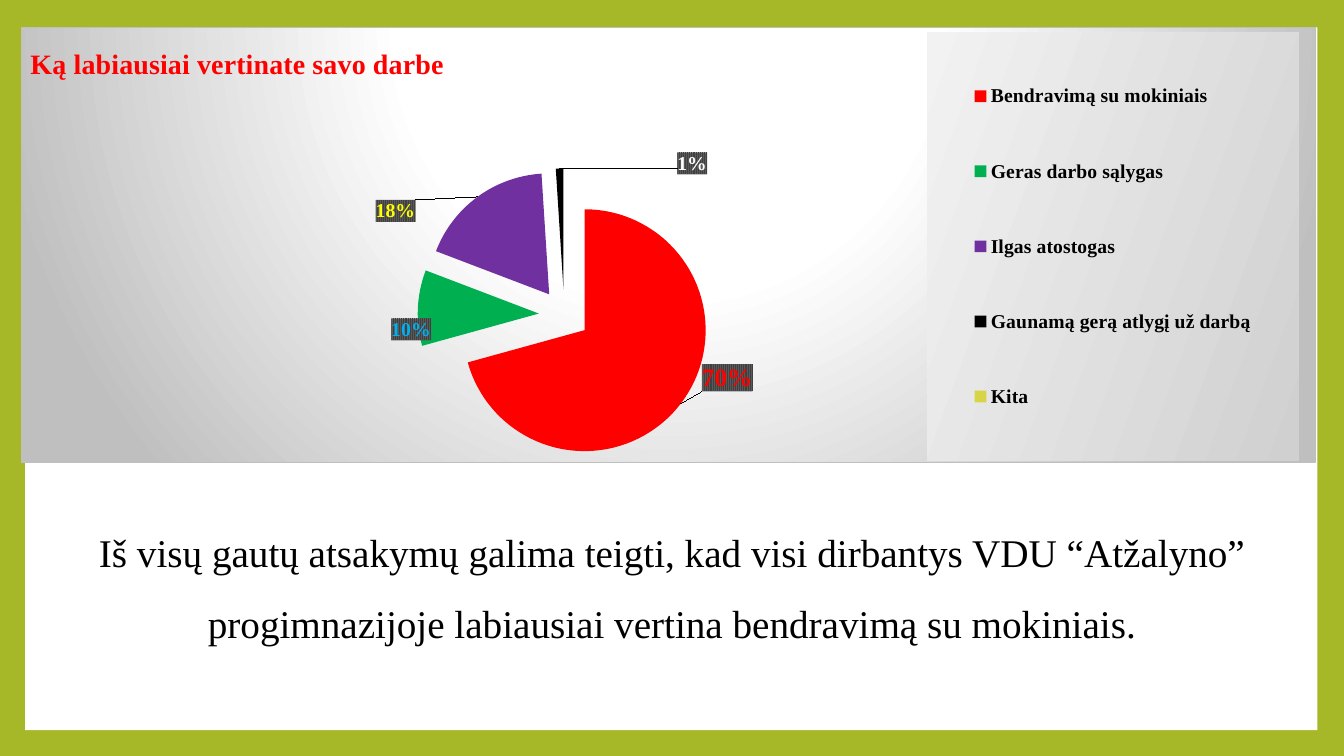
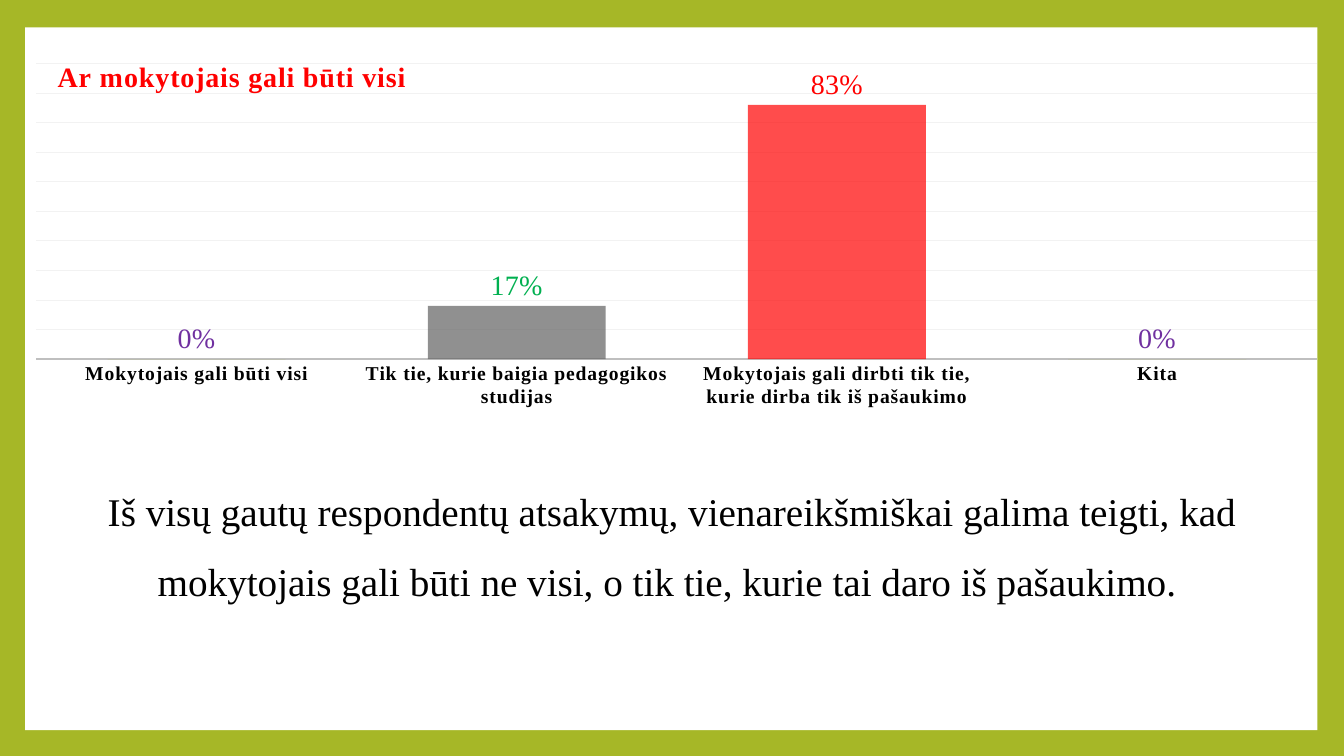
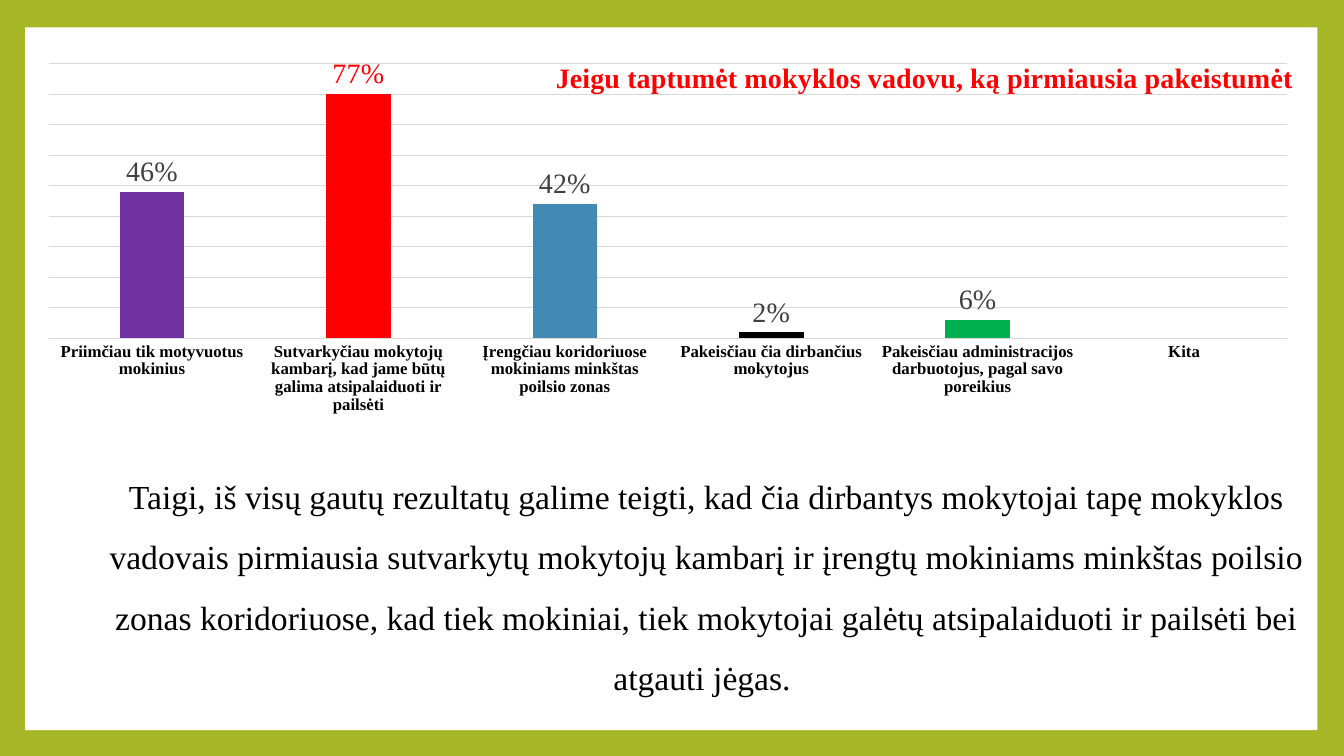
from pptx import Presentation
from pptx.chart.data import CategoryChartData
from pptx.dml.color import RGBColor
from pptx.enum.chart import XL_CHART_TYPE, XL_LABEL_POSITION, XL_LEGEND_POSITION, XL_TICK_MARK
from pptx.enum.shapes import MSO_SHAPE
from pptx.enum.text import MSO_AUTO_SIZE, PP_ALIGN
from pptx.oxml import parse_xml
from pptx.oxml.ns import nsdecls, qn
from pptx.util import Pt

PIE, COLUMN = XL_CHART_TYPE.PIE, XL_CHART_TYPE.COLUMN_CLUSTERED
LABEL_CENTER, LABEL_OUTSIDE = XL_LABEL_POSITION.CENTER, XL_LABEL_POSITION.OUTSIDE_END
LEGEND_RIGHT = XL_LEGEND_POSITION.RIGHT
NO_TICK = XL_TICK_MARK.NONE
RECTANGLE = MSO_SHAPE.RECTANGLE
GROW = MSO_AUTO_SIZE.SHAPE_TO_FIT_TEXT
CENTERED = PP_ALIGN.CENTER

SERIF, SANS = "Times New Roman", "Calibri"
OLIVE = RGBColor(0xA6, 0xB7, 0x27)
WHITE = RGBColor(0xFF, 0xFF, 0xFF)
BLACK = RGBColor(0x00, 0x00, 0x00)
RED = RGBColor(0xFF, 0x00, 0x00)
GREEN = RGBColor(0x00, 0xB0, 0x50)
PURPLE = RGBColor(0x70, 0x30, 0xA0)
BLUE = RGBColor(0x41, 0x8A, 0xB3)
SKY = RGBColor(0x00, 0xB0, 0xF0)
YELLOW = RGBColor(0xFF, 0xFF, 0x00)
MUSTARD = RGBColor(0xD7, 0xD4, 0x47)
DARK = RGBColor(0x40, 0x40, 0x40)
STONE = RGBColor(0x61, 0x61, 0x62)
SILVER = RGBColor(0xBF, 0xBF, 0xBF)
LIGHT = RGBColor(0xD9, 0xD9, 0xD9)
PALE = RGBColor(0xF2, 0xF2, 0xF2)

CHART_GRADIENT = (
    '<a:gradFill><a:gsLst><a:gs pos="0"><a:srgbClr val="FFFFFF"/></a:gs>'
    '<a:gs pos="39000"><a:srgbClr val="FFFFFF"/></a:gs>'
    '<a:gs pos="100000"><a:srgbClr val="BFBFBF"/></a:gs></a:gsLst>'
    '<a:path path="circle"><a:fillToRect l="50000" t="-80000" r="50000" b="180000"/></a:path>'
    '</a:gradFill><a:ln w="9525"><a:solidFill><a:srgbClr val="BFBFBF"/></a:solidFill></a:ln>'
)
LEGEND_GRADIENT = (
    '<a:gradFill><a:gsLst><a:gs pos="0"><a:srgbClr val="F2F2F2"/></a:gs>'
    '<a:gs pos="100000"><a:srgbClr val="D0D0D0"/></a:gs></a:gsLst>'
    '<a:lin ang="1200000" scaled="0"/></a:gradFill>'
)
LABEL_PATTERN = (
    '<a:pattFill prst="narVert"><a:fgClr><a:srgbClr val="404040"/></a:fgClr>'
    '<a:bgClr><a:srgbClr val="595959"/></a:bgClr></a:pattFill>'
)
CLEAR = '<a:noFill/><a:ln><a:noFill/></a:ln>'


def style_font(font, size, color, bold=False, name=SERIF):
    """Set size, colour, weight and typeface of a font."""
    font.size, font.bold, font.name = Pt(size), bold, name
    font.color.rgb = color


def chart_xml(tag, inner="", attributes=""):
    """Build one chart element from its inner XML."""
    return parse_xml(f'<c:{tag} {nsdecls("c", "a")} {attributes}>{inner}</c:{tag}>')


def set_layout(owner, index, x, y, size=None, offset=False, inner_plot=False):
    """Give a chart part a manual position as fractions of the chart."""
    for old in owner.findall(qn("c:layout")):
        owner.remove(old)
    parts = ['<c:layoutTarget val="inner"/>'] if inner_plot else []
    if not offset:
        parts.append('<c:xMode val="edge"/><c:yMode val="edge"/>')
    parts.append(f'<c:x val="{x}"/><c:y val="{y}"/>')
    if size:
        parts.append(f'<c:w val="{size[0]}"/><c:h val="{size[1]}"/>')
    manual = "".join(parts)
    owner.insert(index, chart_xml("layout", f"<c:manualLayout>{manual}</c:manualLayout>"))


def new_page(deck):
    """Add a page with the white panel inside the olive frame."""
    page = deck.slides.add_slide(deck.slide_layouts[6])
    panel = page.shapes.add_shape(RECTANGLE, Pt(18), Pt(19.5), Pt(923), Pt(502))
    panel.shadow.inherit = False
    panel.fill.solid()
    panel.fill.fore_color.rgb = WHITE
    panel.line.fill.background()
    return page


def add_conclusion(page, box, text, size=28, indent=0):
    """Write the centred conclusion under the chart."""
    shape = page.shapes.add_textbox(*map(Pt, box))
    frame = shape.text_frame
    frame.word_wrap, frame.auto_size = True, GROW
    para = frame.paragraphs[0]
    para.text = text
    para.alignment, para.line_spacing, para.space_after = CENTERED, 1.5, Pt(8)
    para._p.get_or_add_pPr().set("marL", str(Pt(indent)))
    style_font(para.font, size, BLACK)


def add_survey_chart(page, box, kind, title, title_at, plot, answers, background):
    """Add a one-series chart with title, plot area, background and point colours."""
    data = CategoryChartData()
    data.categories = [answer[0] for answer in answers]
    data.add_series("Series 1", [answer[1] for answer in answers])
    chart = page.shapes.add_chart(kind, *map(Pt, box), data).chart
    style_font(chart.font, 10, BLACK, name=SANS)
    chart.has_legend = False
    frame = chart.chart_title.text_frame
    frame.text = title
    style_font(frame.paragraphs[0].runs[0].font, 20, RED, True)
    root = chart.element
    set_layout(root.xpath("c:chart/c:title")[0], 1, *title_at)
    set_layout(root.xpath("c:chart/c:plotArea")[0], 0, *plot[:2], plot[2:], inner_plot=True)
    root.xpath("c:chart")[0].addnext(chart_xml("spPr", background))
    chart.plots[0].vary_by_categories = False
    series = chart.plots[0].series[0]
    series.format.fill.solid()
    series.format.fill.fore_color.rgb = OLIVE
    for index, answer in enumerate(answers):
        if answer[2] is not None:
            fill = series.points[index].format.fill
            fill.solid()
            fill.fore_color.rgb = answer[2]
    return chart


def add_pie(page, box, title, answers, labels):
    """Add an exploded pie with moved labels and a shaded legend."""
    chart = add_survey_chart(page, box, PIE, title, (0.003, 0.03),
                             (0, 0.324, 0.839, 0.674), answers, CHART_GRADIENT)
    series = chart.plots[0].series[0]
    root = chart.element
    root.xpath(".//c:dPt")[0].addprevious(chart_xml("explosion", attributes='val="21"'))
    series.data_labels.show_value = False
    for index, (size, color, _, _) in enumerate(labels):
        label = series.points[index].data_label
        style_font(label.font, size, color, True)
        label.position = LABEL_CENTER
    for label, (_, _, x, y) in zip(root.xpath(".//c:dLbl"), labels):
        for old in label.findall(qn("c:spPr")):
            label.remove(old)
        set_layout(label, 1, x, y, offset=True)
        label.insert(2, chart_xml("numFmt", attributes='formatCode="0&quot;%&quot;" sourceLinked="0"'))
        label.insert(3, chart_xml("spPr", LABEL_PATTERN))
    chart.has_legend = True
    chart.legend.position = LEGEND_RIGHT
    chart.legend.include_in_layout = False
    style_font(chart.legend.font, 14, BLACK, True)
    legend = root.xpath("c:chart/c:legend")[0]
    set_layout(legend, 1, 0.7, 0.01, (0.287, 0.987))
    legend.find(qn("c:overlay")).addnext(chart_xml("spPr", LEGEND_GRADIENT))


def add_columns(page, box, title, title_x, plot, answers, top, gap, overlap,
                category_size, axis_line, grid_color):
    """Add a column chart with written labels and a hidden value axis."""
    chart = add_survey_chart(page, box, COLUMN, title, (title_x, 0.13), plot, answers, CLEAR)
    columns = chart.plots[0]
    columns.gap_width, columns.overlap = gap, overlap
    series = columns.series[0]
    series.invert_if_negative = False
    labels = series.data_labels
    labels.show_value, labels.position = True, LABEL_OUTSIDE
    style_font(labels.font, 20, DARK)
    for index, (_, _, _, text, color) in enumerate(answers):
        if text:
            label = series.points[index].data_label
            label.text_frame.text = text
            style_font(label.text_frame.paragraphs[0].runs[0].font, 20, color)
            label.position = LABEL_OUTSIDE
    values = chart.value_axis
    values.minimum_scale, values.maximum_scale, values.major_unit = 0, top, 5
    values.has_major_gridlines = True
    values.major_gridlines.format.line.color.rgb = grid_color
    values.major_gridlines.format.line.width = Pt(0.75)
    values.visible = False
    categories = chart.category_axis
    categories.major_tick_mark = NO_TICK
    style_font(categories.tick_labels.font, category_size, BLACK, True)
    categories.format.line.color.rgb, categories.format.line.width = axis_line[0], Pt(axis_line[1])
    return chart


def soften(chart):
    """Make the columns translucent and space out the title and category letters."""
    for color in chart.element.xpath(".//c:ser//c:spPr/a:solidFill/a:srgbClr"):
        color.append(parse_xml(f'<a:alpha {nsdecls("a")} val="70000"/>'))
    for font in chart.element.xpath(".//c:title//a:rPr | .//c:catAx/c:txPr//a:defRPr"):
        font.set("spc", "50")


def values_page(deck):
    """Build the page on what teachers value at work."""
    page = new_page(deck)
    add_pie(page, (15, 19.5, 925, 311), "Ką labiausiai vertinate savo darbe", [
        ("Bendravimą su mokiniais", 70, RED),
        ("Geras darbo sąlygas", 10, GREEN),
        ("Ilgas atostogas", 18, PURPLE),
        ("Gaunamą gerą atlygį už darbą", 1, BLACK),
        ("Kita", 0, MUSTARD),
    ], [
        (18, RED, 0.073, 0.025),
        (14, SKY, -0.052, 0.043),
        (14, YELLOW, -0.091, -0.08),
        (14, WHITE, 0.101, -0.151),
    ])
    add_conclusion(page, (0, 357, 960, 104),
                   "Iš visų gautų atsakymų galima teigti, kad visi dirbantys VDU “Atžalyno” "
                   "progimnazijoje labiausiai vertina bendravimą su mokiniais.")


def calling_page(deck):
    """Build the page on who can be a teacher."""
    page = new_page(deck)
    chart = add_columns(page, (7, 0, 953, 297), "Ar mokytojais gali būti visi", 0.032,
                        (0.02, 0.153, 0.96, 0.711), [
        ("Mokytojais gali būti visi", 0, None, "0%", PURPLE),
        ("Tik tie, kurie baigia pedagogikos studijas", 9, STONE, "17%", GREEN),
        ("Mokytojais gali dirbti tik tie, kurie dirba tik iš pašaukimo", 43, RED, "83%", RED),
        ("Kita", 0, None, "0%", PURPLE),
    ], 50, 80, 25, 14, (SILVER, 1.25), PALE)
    soften(chart)
    add_conclusion(page, (21.5, 327.5, 917, 109),
                   "Iš visų gautų respondentų atsakymų, vienareikšmiškai galima teigti, kad "
                   "mokytojais gali būti ne visi, o tik tie, kurie tai daro iš pašaukimo. ")


def changes_page(deck):
    """Build the page on what teachers would change as head."""
    page = new_page(deck)
    add_columns(page, (16.5, 0, 921.5, 301.5),
                "Jeigu taptumėt mokyklos vadovu, ką pirmiausia pakeistumėt", 0.409,
                (0.02, 0.151, 0.96, 0.651), [
        ("Priimčiau tik motyvuotus mokinius", 24, PURPLE, "46%", DARK),
        ("Sutvarkyčiau mokytojų kambarį, kad jame būtų galima atsipalaiduoti ir pailsėti",
         40, RED, "77%", RED),
        ("Įrengčiau koridoriuose mokiniams minkštas poilsio zonas", 22, BLUE, "42%", DARK),
        ("Pakeisčiau čia dirbančius mokytojus", 1, BLACK, "2%", DARK),
        ("Pakeisčiau administracijos darbuotojus, pagal savo poreikius", 3, GREEN, "6%", DARK),
        ("Kita", None, None, None, None),
    ], 45, 219, -27, 12, (LIGHT, 0.75), LIGHT)
    add_conclusion(page, (6.5, 322, 960, 181),
                   "Taigi, iš visų gautų rezultatų galime teigti, kad čia dirbantys mokytojai tapę "
                   "mokyklos vadovais pirmiausia sutvarkytų mokytojų kambarį ir įrengtų mokiniams "
                   "minkštas poilsio zonas koridoriuose, kad tiek mokiniai, tiek mokytojai galėtų "
                   "atsipalaiduoti ir pailsėti bei atgauti jėgas. ", 24, 36)


def main():
    """Build and save the deck."""
    deck = Presentation()
    deck.slide_width, deck.slide_height = Pt(960), Pt(540)
    backdrop = deck.slide_master.background.fill
    backdrop.solid()
    backdrop.fore_color.rgb = OLIVE
    for build in (values_page, calling_page, changes_page):
        build(deck)
    deck.save("out.pptx")


if __name__ == "__main__":
    main()
